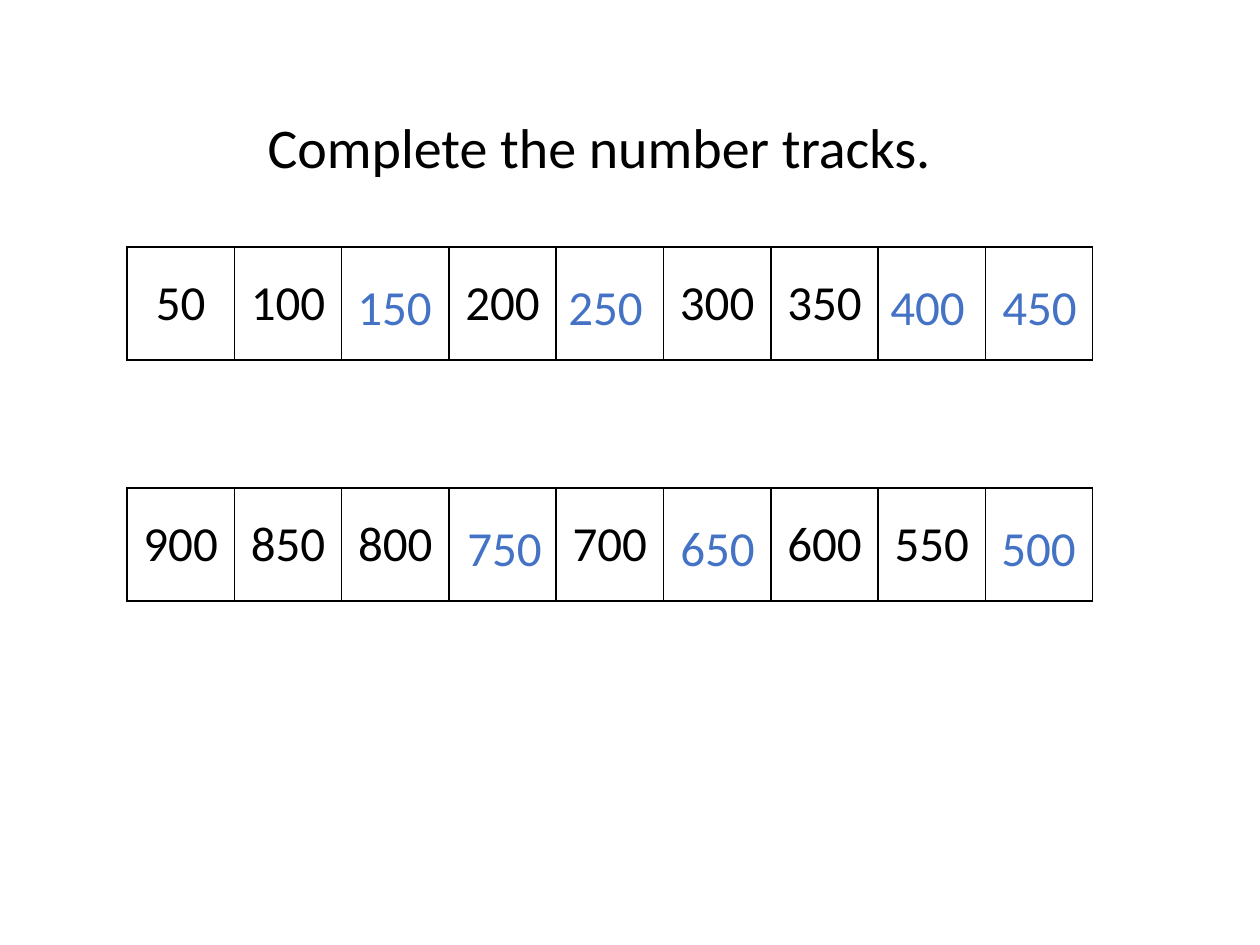
import pptx
import pptx.dml.color
import pptx.enum.text
import pptx.oxml
import pptx.oxml.ns
import pptx.util

SCALE = 914400 / 126  # EMU in one px
BLACK = pptx.dml.color.RGBColor(0x00, 0x00, 0x00)
BLUE = pptx.dml.color.RGBColor(0x44, 0x72, 0xC4)
CENTER = pptx.enum.text.PP_ALIGN.CENTER
LEFT = pptx.enum.text.PP_ALIGN.LEFT

TITLE_FORMAT = {"name": "Calibri", "size": pptx.util.Pt(32)}
NUMBER_FORMAT = {"name": "Calibri", "size": pptx.util.Pt(28)}

TRACK_SIZE = (966, 113)
ANSWER_TOP = 23
ANSWER_SIZE = (112, 72)

# Each track: left, top, given numbers (None = gap), answers by left offset
TRACKS = [
    (127, 247, [50, 100, None, 200, None, 300, 350, None, None],
     {218: 150, 429: 250, 751: 400, 863: 450}),
    (127, 488, [900, 850, 800, None, 700, None, 600, 550, None],
     {328: 750, 541: 650, 862: 500}),
]


def px(length):
    return pptx.util.Emu(round(length * SCALE))


def write_text(text_frame, text, text_format, color, alignment):
    paragraph = text_frame.paragraphs[0]
    paragraph.alignment = alignment
    run = paragraph.add_run()
    run.text = text
    for attribute, value in text_format.items():
        setattr(run.font, attribute, value)
    run.font.color.rgb = color


def add_text(slide, box, text, text_format, color, alignment, wrap):
    shape = slide.shapes.add_textbox(*map(px, box))
    shape.text_frame.word_wrap = wrap
    shape.text_frame.auto_size = pptx.enum.text.MSO_AUTO_SIZE.SHAPE_TO_FIT_TEXT
    write_text(shape.text_frame, text, text_format, color, alignment)


def add_borders(cell):
    """Draw a 1 pt black line on all four sides of the cell."""
    properties = cell._tc.get_or_add_tcPr()
    for side in ("lnL", "lnR", "lnT", "lnB"):
        properties.append(pptx.oxml.parse_xml(
            f'<a:{side} {pptx.oxml.ns.nsdecls("a")} w="12700"><a:solidFill>'
            f'<a:srgbClr val="{BLACK}"/></a:solidFill></a:{side}>'))


def add_track(slide, left, top, numbers, answers):
    """Place a one-row table of numbers with the answers over its gaps."""
    width, height = TRACK_SIZE
    table = slide.shapes.add_table(
        1, len(numbers), px(left), px(top), px(width), px(height)).table
    table.first_row = table.horz_banding = False
    for column, number in enumerate(numbers):
        table.columns[column].width = px(width / len(numbers))
        cell = table.cell(0, column)
        add_borders(cell)
        cell.fill.background()
        cell.vertical_anchor = pptx.enum.text.MSO_ANCHOR.MIDDLE
        if number is not None:
            write_text(cell.text_frame, str(number), NUMBER_FORMAT, BLACK, CENTER)
    for offset, answer in answers.items():
        box = (left + offset, top + ANSWER_TOP, *ANSWER_SIZE)
        add_text(slide, box, str(answer), NUMBER_FORMAT, BLUE, LEFT, False)


def main():
    presentation = pptx.Presentation()
    presentation.slide_width, presentation.slide_height = px(1260), px(945)
    slide = presentation.slides.add_slide(presentation.slide_layouts[6])
    add_text(slide, (127, 106, 945, 81), "Complete the number tracks.",
             TITLE_FORMAT, BLACK, CENTER, True)
    for track in TRACKS:
        add_track(slide, *track)
    presentation.save("out.pptx")


if __name__ == "__main__":
    main()
